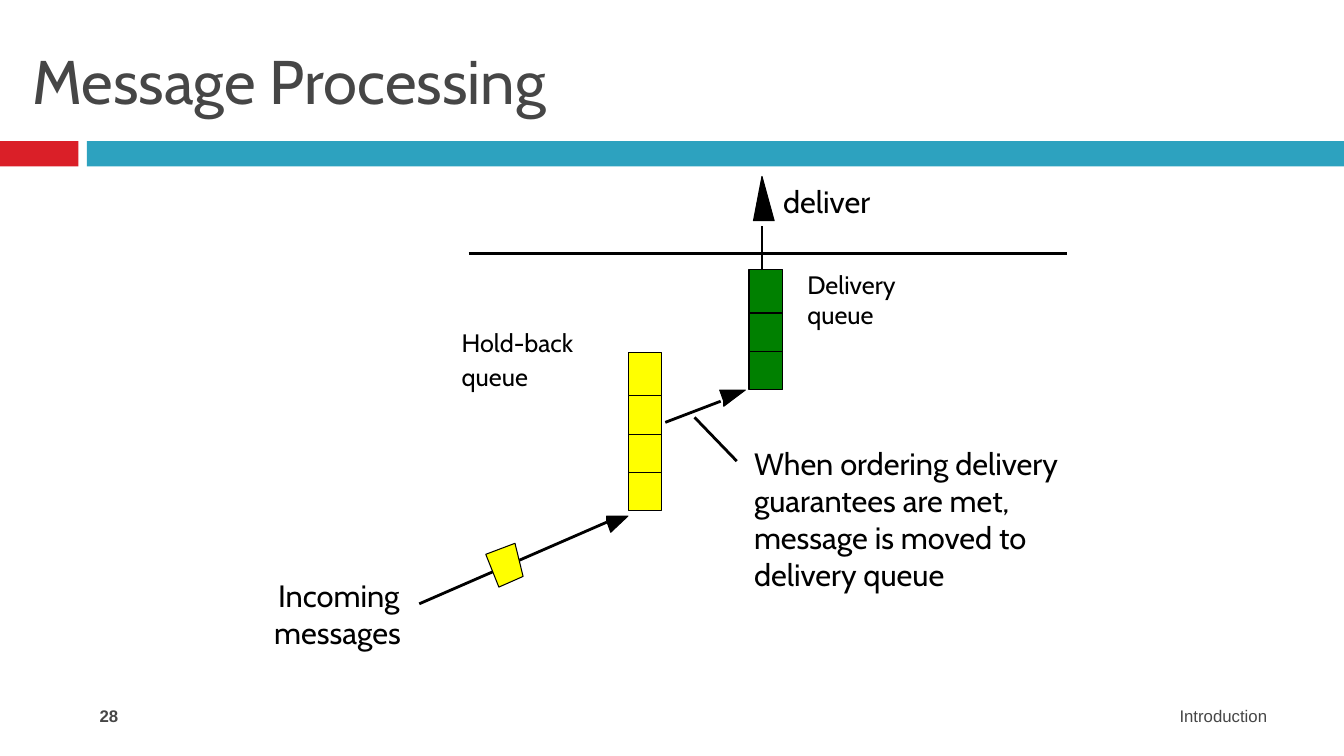
from dataclasses import dataclass

from lxml import etree
from pptx import Presentation
from pptx.dml.color import RGBColor
from pptx.enum import shapes, text
from pptx.util import Pt


@dataclass(frozen=True)
class Theme:
    font: str = "Cabin"
    footer_font: str = "Arial"
    ink: str = "000000"
    grey: str = "464646"
    red: str = "DA1F28"
    teal: str = "2DA2BF"
    green: str = "008000"
    yellow: str = "FFFF00"
    title: int = 44
    body: int = 22
    label: int = 18
    footer: int = 12
    hairline: int = 0


class Painter:
    """Draws on one slide in one theme; all lengths are points."""

    def __init__(self, slide, theme):
        self.slide = slide
        self.shapes = slide.shapes
        self.theme = theme

    def _paint(self, sp, fill, outlined):
        sp.shadow.inherit = False
        sp.fill.solid()
        sp.fill.fore_color.rgb = RGBColor.from_string(fill)
        if outlined:
            self._stroke(sp.line)
        else:
            sp.line.fill.background()

    def _stroke(self, line):
        line.color.rgb = RGBColor.from_string(self.theme.ink)
        line.width = Pt(self.theme.hairline)

    def _font(self, p, name, size, color, bold=False):
        p.font.name = name
        p.font.size = Pt(size)
        p.font.bold = bold
        p.font.color.rgb = RGBColor.from_string(color)

    def title(self, words, x, y, w, h):
        sp = self.shapes.title
        sp.left, sp.top, sp.width, sp.height = map(Pt, (x, y, w, h))
        tf = sp.text_frame
        tf.text = words
        tf.auto_size = text.MSO_AUTO_SIZE.NONE
        tf.vertical_anchor = text.MSO_ANCHOR.MIDDLE
        p = tf.paragraphs[0]
        p.alignment = text.PP_ALIGN.LEFT
        self._font(p, self.theme.font, self.theme.title, self.theme.grey)

    def rect(self, x, y, w, h, fill, outlined=False):
        sp = self.shapes.add_shape(shapes.MSO_SHAPE.RECTANGLE, *map(Pt, (x, y, w, h)))
        self._paint(sp, fill, outlined)

    def queue(self, x, bottom, count, fill, w=24, h=31.2, pitch=27.4):
        """Stack cells upwards, each overlapping the one below."""
        for i in range(count):
            self.rect(x, bottom - h - i * pitch, w, h, fill, outlined=True)

    def polygon(self, points, fill):
        start, *rest = [(Pt(x), Pt(y)) for x, y in points]
        builder = self.shapes.build_freeform(*start)
        builder.add_line_segments(rest, close=True)
        self._paint(builder.convert_to_shape(), fill, outlined=True)

    def line(self, x1, y1, x2, y2):
        cxn = self.shapes.add_connector(
            shapes.MSO_CONNECTOR.STRAIGHT, *map(Pt, (x1, y1, x2, y2)))
        self._stroke(cxn.line)
        ns = "http://schemas.openxmlformats.org/drawingml/2006/main"
        etree.SubElement(cxn._element.spPr, f"{{{ns}}}effectLst")

    def _box(self, words, x, y, w, h):
        tf = self.shapes.add_textbox(*map(Pt, (x, y, w, h))).text_frame
        tf.word_wrap = True
        tf.text = words
        return tf

    def label(self, words, x, y, w, h, size):
        tf = self._box(words, x, y, w, h)
        tf.margin_left = tf.margin_top = tf.margin_right = tf.margin_bottom = 0
        tf.auto_size = text.MSO_AUTO_SIZE.SHAPE_TO_FIT_TEXT
        for p in tf.paragraphs:
            self._font(p, self.theme.font, size, self.theme.ink)

    def footer(self, words, x, w, align, bold=False):
        p = self._box(words, x, 500.4, w, 28.8).paragraphs[0]
        p.alignment = align
        self._font(p, self.theme.footer_font, self.theme.footer, self.theme.grey, bold)


def main():
    prs = Presentation()
    prs.slide_width, prs.slide_height = Pt(960), Pt(540)
    theme = Theme()
    s = Painter(prs.slides.add_slide(prs.slide_layouts[5]), theme)

    s.rect(0, 100.8, 56, 18, theme.red)
    s.rect(62, 100.8, 898, 18, theme.teal)
    s.title("Message Processing", 16, 18, 928, 78)

    # Delivery queue, with its boundary line and way out
    s.line(334.8, 180.9, 762, 180.9)
    s.queue(535, 278.4, 3, theme.green)
    s.line(544.3, 193, 544.3, 161.3)
    s.polygon([(538.2, 157.7), (544.3, 126), (553, 157.7)], theme.ink)
    s.label("deliver", 559.4, 130.3, 78, 26.6, theme.body)
    s.label("Delivery\nqueue", 576.7, 192.2, 161, 58, theme.label)

    # Hold-back queue and the move to delivery
    s.queue(448.6, 364.9, 4, theme.yellow)
    s.label("Hold-back", 329.8, 234, 114, 28.8, theme.label)
    s.label("queue", 329.8, 257.8, 75, 28.8, theme.label)
    s.line(475.2, 301.7, 514.8, 286.6)
    s.polygon([(517, 286.6), (514.1, 278.6), (532.4, 278.6), (517, 290.2)], theme.ink)
    s.line(496.1, 298.1, 526.3, 329.4)
    s.label("When ordering delivery guarantees are met, message is moved to delivery queue",
            538.6, 317.5, 224, 133.2, theme.body)

    # Incoming message
    s.line(433.4, 373, 299.5, 431.3)
    s.polygon([(433.4, 372.2), (433.4, 368.6), (448.6, 368.6), (436.3, 380.2)], theme.ink)
    s.polygon([(347, 396), (367.9, 388.1), (373.7, 411.8), (356.4, 419.4)], theme.yellow)
    s.label("Incoming", 198.7, 411.8, 104.4, 26.6, theme.body)
    s.label("messages", 195.8, 438.5, 116.6, 26.6, theme.body)

    s.footer("Introduction", 544.3, 368, text.PP_ALIGN.RIGHT)
    s.footer("28", 64.1, 208, text.PP_ALIGN.LEFT, bold=True)

    prs.save("out.pptx")


if __name__ == "__main__":
    main()
